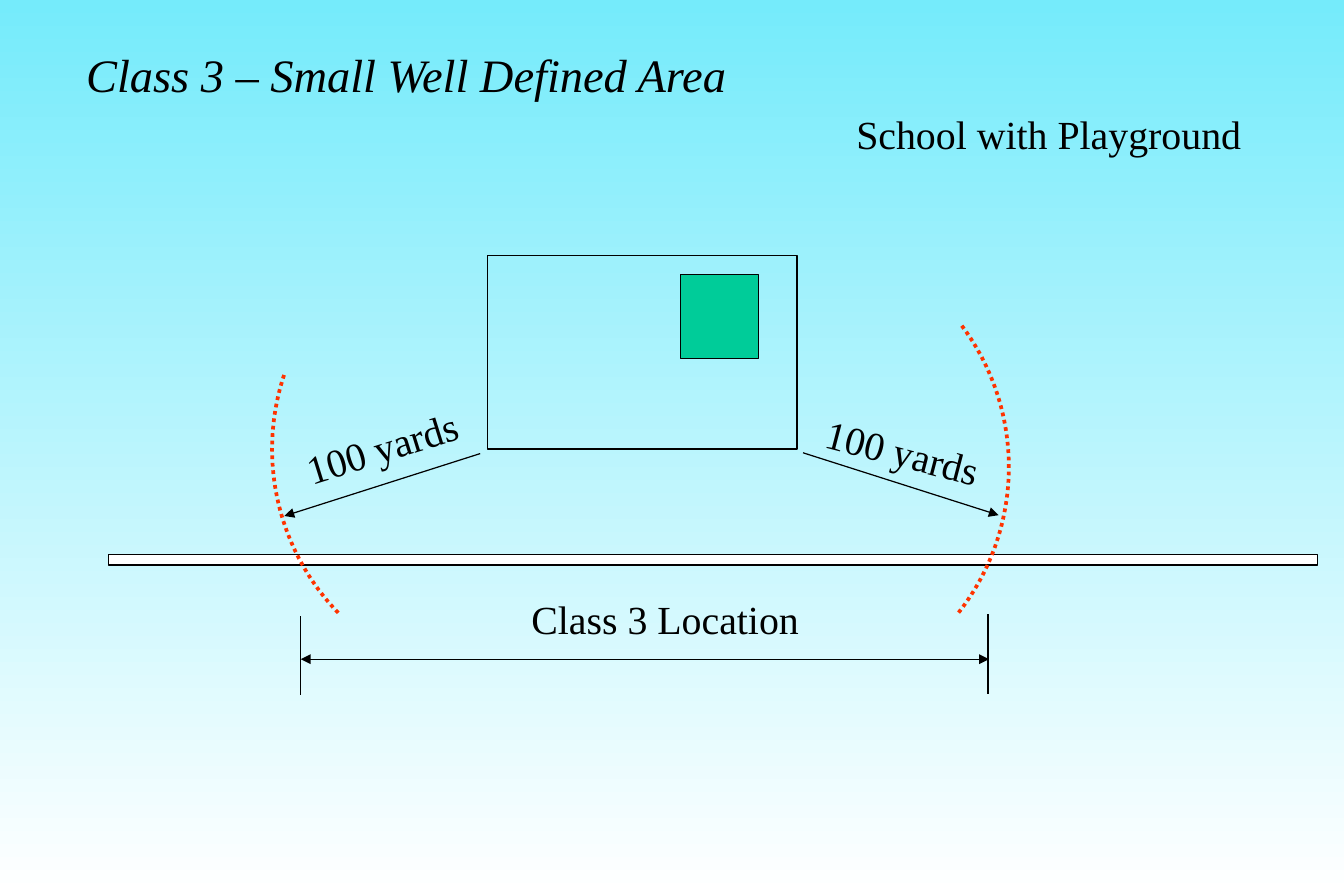
import pptx
import pptx.util
import pptx.dml.color
import pptx.enum.dml
import pptx.enum.shapes
import pptx.enum.text
import pptx.oxml
import pptx.oxml.ns

Pt = pptx.util.Pt
COLORS = {
    "sky": "75EBFB",
    "white": "FFFFFF",
    "ink": "000000",
    "playground": "00CC99",
    "radius": "FF3300",
}
TITLE_ONLY = 5


class Diagram:
    def __init__(self, presentation):
        self.font = "Times New Roman"
        self.thin = 0.75
        self.slide = presentation.slides.add_slide(presentation.slide_layouts[TITLE_ONLY])

    def color(self, name):
        return pptx.dml.color.RGBColor.from_string(COLORS[name])

    def background(self, top, bottom):
        fill = self.slide.background.fill
        fill.gradient()
        fill.gradient_angle = 270
        for stop, name in zip(fill.gradient_stops, (top, bottom)):
            stop.color.rgb = self.color(name)

    def outline(self, line, name, width):
        line.color.rgb = self.color(name)
        line.width = Pt(width)

    def set_text(self, shape, text, size, centered, italic=False):
        frame = shape.text_frame
        frame.word_wrap = False
        frame.auto_size = pptx.enum.text.MSO_AUTO_SIZE.SHAPE_TO_FIT_TEXT
        anchors = pptx.enum.text.MSO_ANCHOR
        frame.vertical_anchor = anchors.MIDDLE if centered else anchors.TOP
        paragraph = frame.paragraphs[0]
        alignments = pptx.enum.text.PP_ALIGN
        paragraph.alignment = alignments.CENTER if centered else alignments.LEFT
        run = paragraph.add_run()
        run.text = text
        run.font.name = self.font
        run.font.size = Pt(size)
        run.font.italic = italic
        run.font.color.rgb = self.color("ink")

    def title(self, text, left, top, width, height):
        shape = self.slide.shapes.title
        shape.left, shape.top = Pt(left), Pt(top)
        shape.width, shape.height = Pt(width), Pt(height)
        self.set_text(shape, text, 28, True, italic=True)

    def label(self, text, left, top, width, rotation=0):
        shape = self.slide.shapes.add_textbox(Pt(left), Pt(top), Pt(width), Pt(36))
        shape.rotation = rotation
        self.set_text(shape, text, 24, rotation != 0)

    def rectangle(self, left, top, width, height, fill=None):
        shape = self.slide.shapes.add_shape(
            pptx.enum.shapes.MSO_SHAPE.RECTANGLE, Pt(left), Pt(top), Pt(width), Pt(height))
        shape.shadow.inherit = False
        if fill:
            shape.fill.solid()
            shape.fill.fore_color.rgb = self.color(fill)
        else:
            shape.fill.background()
        self.outline(shape.line, "ink", self.thin)

    def arc(self, center_x, center_y, radius, start, end):
        shape = self.slide.shapes.add_shape(
            pptx.enum.shapes.MSO_SHAPE.ARC, Pt(center_x - radius), Pt(center_y - radius),
            Pt(2 * radius), Pt(2 * radius))
        shape.shadow.inherit = False
        shape.fill.background()
        for index, degrees in enumerate((start, end)):
            shape.adjustments[index] = degrees * 0.6
        self.outline(shape.line, "radius", 2.25)
        shape.line.dash_style = pptx.enum.dml.MSO_LINE.ROUND_DOT

    def line(self, begin_x, begin_y, end_x, end_y, arrowheads=()):
        connector = self.slide.shapes.add_connector(
            pptx.enum.shapes.MSO_CONNECTOR.STRAIGHT,
            Pt(begin_x), Pt(begin_y), Pt(end_x), Pt(end_y))
        self.outline(connector.line, "ink", self.thin)
        properties = connector._element.spPr
        outline = properties.find(pptx.oxml.ns.qn("a:ln"))
        for arrowhead in arrowheads:
            outline.append(pptx.oxml.parse_xml(
                f'<a:{arrowhead} {pptx.oxml.ns.nsdecls("a")} type="triangle"/>'))
        properties.append(pptx.oxml.parse_xml(
            f'<a:effectLst {pptx.oxml.ns.nsdecls("a")}/>'))


def main():
    presentation = pptx.Presentation()
    presentation.slide_width = Pt(810)
    presentation.slide_height = Pt(540)
    diagram = Diagram(presentation)
    diagram.background("sky", "white")
    diagram.rectangle(65.5, 334, 728.6, 6.5, "white")
    diagram.title("Class 3 – Small Well Defined Area", 42.5, 23.8, 404.6, 41)

    diagram.line(171.4, 311, 289.4, 273.4, ["headEnd"])
    diagram.label("100 yards", 175.7, 251.3, 108.7, 342.7)
    diagram.line(181.2, 371.3, 181.2, 419)
    diagram.line(595.4, 370.2, 595.4, 418.2)
    diagram.line(181.2, 397.3, 596, 397.3, ["headEnd", "tailEnd"])
    diagram.label("Class 3 Location", 313.2, 355, 175.7)

    diagram.arc(306, 270.7, 142, 136, 199)
    diagram.arc(465.8, 281.5, 142.2, 323.2, 38.8)
    diagram.rectangle(293.8, 154.1, 186.5, 116.6)
    diagram.rectangle(410.2, 165.6, 46.8, 50.4, "playground")
    diagram.label("School with Playground", 509, 62.6, 246.2)

    diagram.line(601.9, 310.5, 484, 272.9, ["headEnd"])
    diagram.label("100 yards", 489.6, 254.2, 108.7, 14.6)
    presentation.save("out.pptx")


if __name__ == "__main__":
    main()
